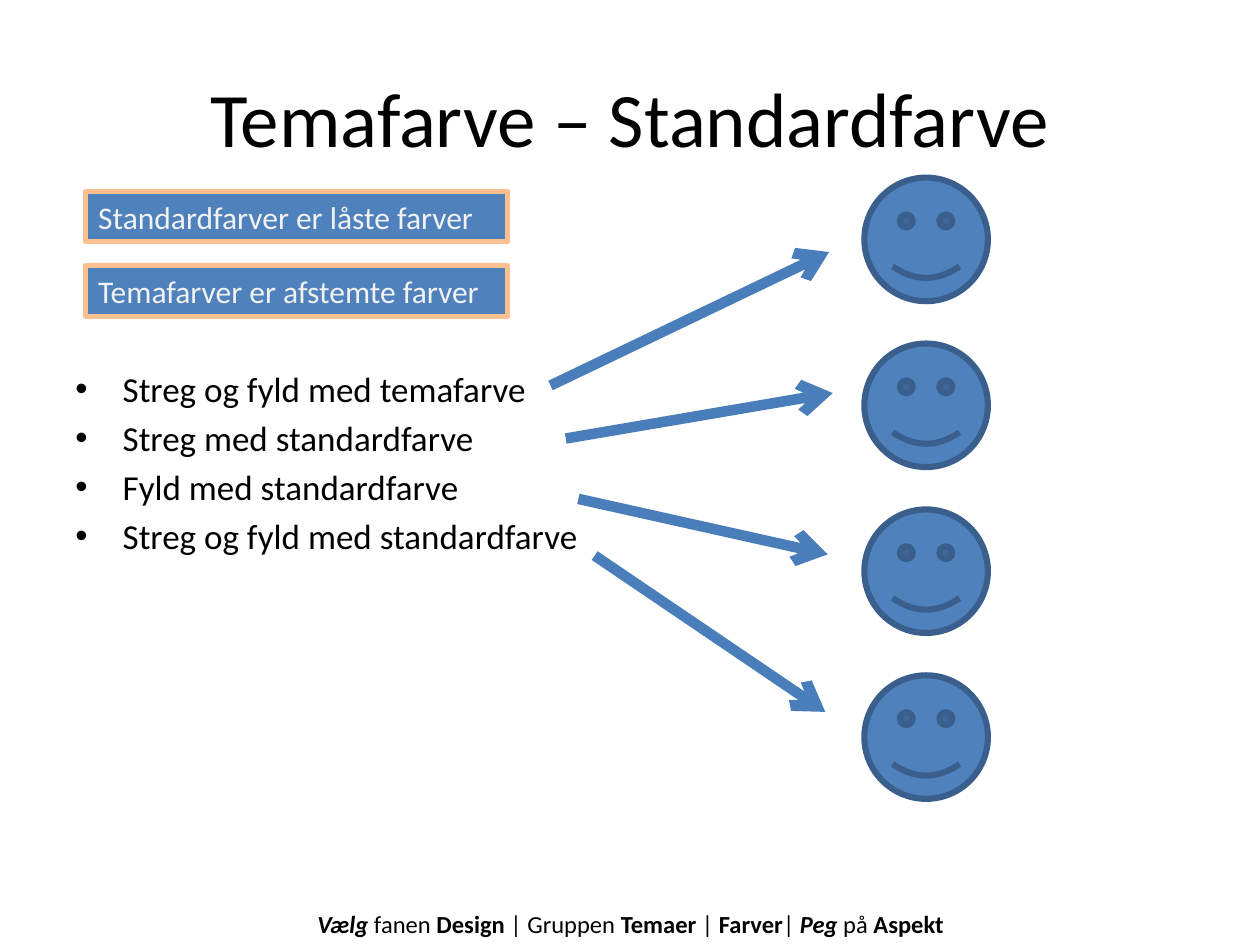
from lxml import etree
from pptx import Presentation
from pptx.dml.color import RGBColor
from pptx.enum.shapes import MSO_CONNECTOR, MSO_SHAPE
from pptx.enum.text import MSO_ANCHOR, PP_ALIGN
from pptx.oxml.ns import qn
from pptx.util import Pt

STRAIGHT = MSO_CONNECTOR.STRAIGHT
RECTANGLE = MSO_SHAPE.RECTANGLE
SMILEY = MSO_SHAPE.SMILEY_FACE
TOP, MIDDLE = MSO_ANCHOR.TOP, MSO_ANCHOR.MIDDLE
LEFT, CENTER = PP_ALIGN.LEFT, PP_ALIGN.CENTER

BLACK = RGBColor(0x00, 0x00, 0x00)
PALE = RGBColor(0xF2, 0xF2, 0xF2)
BLUE = RGBColor(0x4F, 0x81, 0xBD)
DARK_BLUE = RGBColor(0x3A, 0x5F, 0x8C)
ARROW_BLUE = RGBColor(0x4A, 0x7E, 0xBB)
ORANGE = RGBColor(0xFA, 0xC0, 0x90)

BULLETS = [
    "Streg og fyld med temafarve",
    "Streg med standardfarve",
    "Fyld med standardfarve",
    "Streg og fyld med standardfarve",
]
LABELS = ["Standardfarver er låste farver", "Temafarver er afstemte farver"]
ARROWS = [
    (314.6, 220.3, 473.8, 144),
    (323.3, 250.6, 475.9, 224.6),
    (330.5, 285.1, 473, 316.8),
    (339.8, 317.5, 471.6, 406.8),
]
BOLD = {"bold": True}
BOLD_ITALIC = {"bold": True, "italic": True}
FOOTER = [
    ("Vælg", BOLD_ITALIC),
    (" fanen ", {}),
    ("Design", BOLD),
    (" | Gruppen ", {}),
    ("Temaer", BOLD),
    (" | ", {}),
    ("Farver", BOLD),
    ("| ", {}),
    ("Peg ", BOLD_ITALIC),
    ("på ", {}),
    ("Aspekt", BOLD),
]


def set_values(target, values):
    for name, value in values.items():
        setattr(target, name, value)


def add_span(para, text, size, color, style):
    span = para.add_run()
    span.text = text
    set_values(span.font, {"name": "Calibri", "size": Pt(size), **style})
    span.font.color.rgb = color


def add_text_box(page, frame, anchor, wrap=True):
    box = page.shapes.add_textbox(*map(Pt, frame))
    set_values(box.text_frame, {"word_wrap": wrap, "vertical_anchor": anchor})
    return box.text_frame


def add_centered_line(page, frame, spans, size, wrap):
    para = add_text_box(page, frame, MIDDLE, wrap).paragraphs[0]
    para.alignment = CENTER
    for text, style in spans:
        add_span(para, text, size, BLACK, style)


def add_bullet_list(page, frame, items):
    text_frame = add_text_box(page, frame, TOP)
    for index, item in enumerate(items):
        para = text_frame.add_paragraph() if index else text_frame.paragraphs[0]
        para.space_before = Pt(4)
        add_span(para, item, 20, BLACK, {})
        properties = para._p.get_or_add_pPr()
        properties.set("marL", str(Pt(27)))
        properties.set("indent", str(-Pt(27)))
        etree.SubElement(properties, qn("a:buFont"), typeface="Arial")
        etree.SubElement(properties, qn("a:buChar"), char="•")


def add_filled_shape(page, kind, frame, line_color, line_width):
    shape = page.shapes.add_shape(kind, *map(Pt, frame))
    shape.shadow.inherit = False
    shape.fill.solid()
    shape.fill.fore_color.rgb = BLUE
    shape.line.color.rgb = line_color
    shape.line.width = Pt(line_width)
    return shape


def add_label(page, frame, text):
    text_frame = add_filled_shape(page, RECTANGLE, frame, ORANGE, 3).text_frame
    set_values(text_frame, {"word_wrap": True, "vertical_anchor": TOP})
    para = text_frame.paragraphs[0]
    para.alignment = LEFT
    add_span(para, text, 18, PALE, {})


def add_arrow(page, ends):
    arrow = page.shapes.add_connector(STRAIGHT, *map(Pt, ends))
    arrow.line.color.rgb = ARROW_BLUE
    arrow.line.width = Pt(6)
    etree.SubElement(arrow.line._get_or_add_ln(), qn("a:tailEnd"), type="arrow")
    etree.SubElement(arrow._element.spPr, qn("a:effectLst"))


def main():
    deck = Presentation()
    set_values(deck, {"slide_width": Pt(720), "slide_height": Pt(540)})
    page = deck.slides.add_slide(deck.slide_layouts[6])

    title = [("Temafarve – Standardfarve", {})]
    add_centered_line(page, (36, 21.6, 648, 90), title, 44, True)
    add_bullet_list(page, (36, 206.6, 318.2, 275.8), BULLETS)
    for index, ends in enumerate(ARROWS):
        add_filled_shape(page, SMILEY, (493.9, 101.5 + 94.8 * index, 70.6, 70.6), DARK_BLUE, 3.5)
        add_arrow(page, ends)
    add_centered_line(page, (172.8, 515.5, 375.1, 24.5), FOOTER, 14, False)
    for index, text in enumerate(LABELS):
        add_label(page, (49, 109.4 + 42.5 * index, 241.2, 28.8), text)

    deck.save("out.pptx")


if __name__ == "__main__":
    main()
